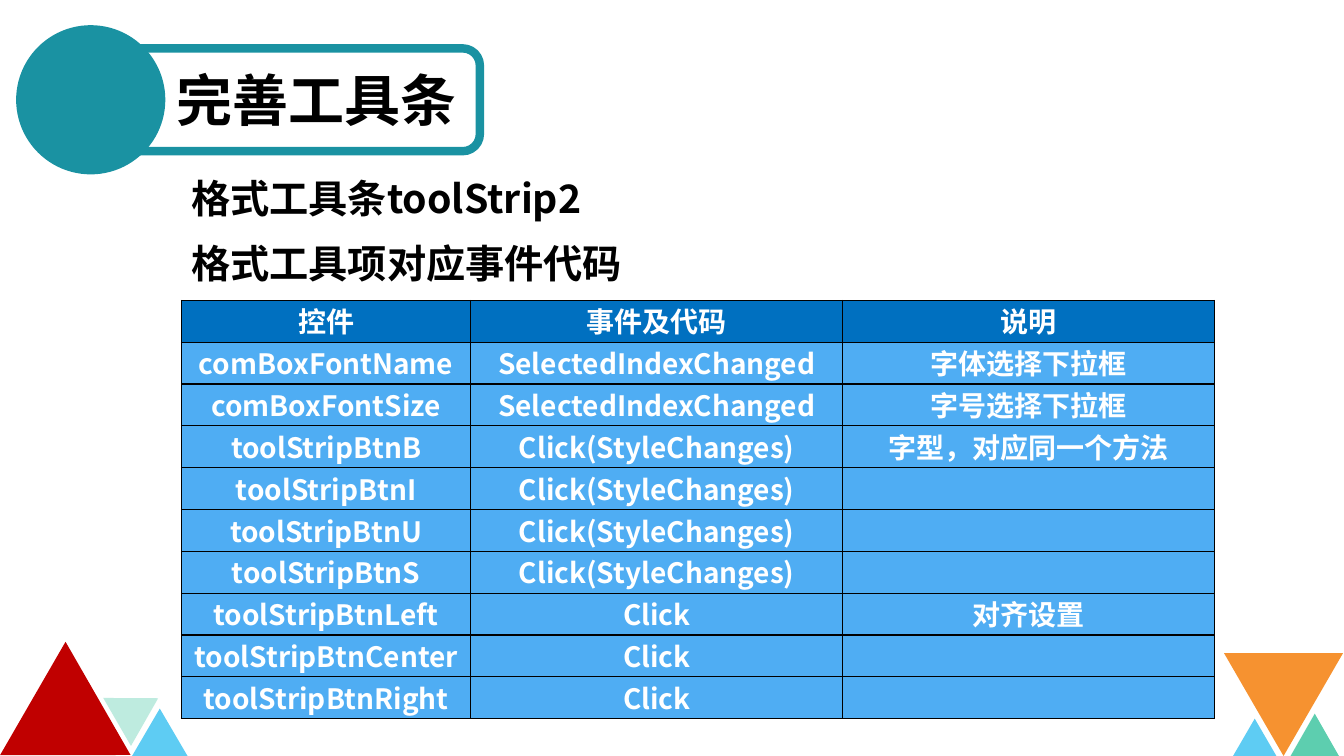
from dataclasses import dataclass

from lxml import etree
from pptx import Presentation
from pptx import util as u
from pptx.dml.color import RGBColor
from pptx.enum import shapes, text
from pptx.oxml import ns

FONT = "Noto Sans CJK SC"
BLACK = RGBColor(0x00, 0x00, 0x00)
WHITE = RGBColor(0xFF, 0xFF, 0xFF)
TEAL = RGBColor(0x1A, 0x92, 0xA2)
ICON_GRAY = RGBColor(0xF2, 0xF2, 0xF2)
HEADER_BLUE = RGBColor(0x00, 0x70, 0xC0)
ROW_BLUE = RGBColor(0x4F, 0xAD, 0xF3)
SKY = RGBColor(0x5E, 0xCC, 0xF3)
MINT = RGBColor(0xBE, 0xEB, 0xDF)
RED = RGBColor(0xC0, 0x00, 0x00)
GREEN = RGBColor(0x5D, 0xCE, 0xAF)
ORANGE = RGBColor(0xF6, 0x92, 0x30)


@dataclass(frozen=True)
class Triangle:
    left: float
    top: float
    width: float
    height: float
    color: RGBColor
    rotation: float = 0


LEFT_TRIANGLES = [
    Triangle(1.31, 7.03, 0.55, 0.47, SKY),
    Triangle(1.09, 6.81, 0.55, 0.47, MINT, 60),
    Triangle(0.16, 6.65, 1.3, 1.12, RED, 120),
]
RIGHT_TRIANGLES = [
    Triangle(12.8, 7.08, 0.48, 0.42, GREEN),
    Triangle(12.14, 6.48, 1.18, 1.02, ORANGE, 180),
    Triangle(12.23, 7.13, 0.43, 0.37, SKY),
]
COLUMN_WIDTHS = [2.87, 3.69, 3.69]
ROW_HEIGHT = 0.415
ROWS = [
    ("控件", "事件及代码", "说明"),
    ("comBoxFontName", "SelectedIndexChanged", "字体选择下拉框"),
    ("comBoxFontSize", "SelectedIndexChanged", "字号选择下拉框"),
    ("toolStripBtnB", "Click(StyleChanges)", "字型，对应同一个方法"),
    ("toolStripBtnI", "Click(StyleChanges)", ""),
    ("toolStripBtnU", "Click(StyleChanges)", ""),
    ("toolStripBtnS", "Click(StyleChanges)", ""),
    ("toolStripBtnLeft", "Click", "对齐设置"),
    ("toolStripBtnCenter", "Click", ""),
    ("toolStripBtnRight", "Click", ""),
]
Points = list[tuple[float, float]]


def write_text(frame, content: str, *, size: float, color: RGBColor = BLACK,
               align=None, line_spacing=None, space_before: float = 0) -> None:
    for index, line in enumerate(content.split("\n")):
        paragraph = frame.add_paragraph() if index else frame.paragraphs[0]
        paragraph.alignment = align
        paragraph.line_spacing = line_spacing
        if index:
            paragraph.space_before = u.Pt(space_before)
        run = paragraph.add_run()
        run.text = line
        font = run.font
        font.name, font.size, font.bold = FONT, u.Pt(size), True
        font.color.rgb = color
        east_asian = etree.SubElement(run._r.get_or_add_rPr(), ns.qn("a:ea"))
        east_asian.set("typeface", FONT)


def add_preset(container, kind, left: float, top: float, width: float, height: float,
               fill: RGBColor | None = None):
    shape = container.add_shape(kind, u.Inches(left), u.Inches(top),
                                u.Inches(width), u.Inches(height))
    shape.shadow.inherit = False
    shape.line.fill.background()
    if fill is None:
        shape.fill.background()
    else:
        shape.fill.solid()
        shape.fill.fore_color.rgb = fill
    return shape


def add_triangles(slide, triangles: list[Triangle]) -> None:
    group = slide.shapes.add_group_shape()
    for item in triangles:
        shape = add_preset(group.shapes, shapes.MSO_SHAPE.ISOSCELES_TRIANGLE, item.left,
                           item.top, item.width, item.height, item.color)
        shape.rotation = item.rotation


def rectangle(left: float, top: float, right: float, bottom: float) -> Points:
    return [(left, top), (right, top), (right, bottom), (left, bottom)]


def drive_half(inner: float, outer: float, top: float, bottom: float) -> Points:
    inward = 1 if inner > outer else -1
    corner = [(0.03, 0), (0.01, 0.01), (0, 0.03)]
    upper = [(outer + inward * x, top + y) for x, y in corner]
    lower = [(outer + inward * x, bottom - y) for x, y in reversed(corner)]
    return [(inner, top), *upper, *lower, (inner, bottom)]


def server_contours() -> list[Points]:
    contours = [
        rectangle(0.57, 1.31, 0.81, 1.37),
        rectangle(1.04, 1.31, 1.23, 1.37),
        rectangle(0.81, 1.28, 1, 1.4),
        rectangle(0.88, 1.19, 0.93, 1.28),
    ]
    for top, bottom in [(0.57, 0.74), (0.79, 0.96), (1.01, 1.19)]:
        contours += [
            drive_half(0.96, 0.57, top, bottom),
            drive_half(1, 1.23, top, bottom),
            rectangle(1.05, top + 0.07, 1.13, top + 0.11),
        ]
    return contours


def add_server_badge(slide) -> None:
    group = slide.shapes.add_group_shape()
    add_preset(group.shapes, shapes.MSO_SHAPE.OVAL, 0.16, 0.25, 1.48, 1.48, TEAL)
    contours = server_contours()
    builder = group.shapes.build_freeform(*contours[0][0], scale=u.Inches(1))
    for index, contour in enumerate(contours):
        if index:
            builder.move_to(*contour[0])
        builder.add_line_segments(contour[1:], close=True)
    icon = builder.convert_to_shape()
    icon.shadow.inherit = False
    icon.fill.solid()
    icon.fill.fore_color.rgb = ICON_GRAY
    icon.line.fill.background()


def add_text_box(slide, left: float, top: float, width: float, height: float, wrap: bool):
    box = slide.shapes.add_textbox(u.Inches(left), u.Inches(top),
                                   u.Inches(width), u.Inches(height))
    box.text_frame.word_wrap = wrap
    return box.text_frame


def set_borders(cell) -> None:
    properties = cell._tc.get_or_add_tcPr()
    for index, side in enumerate(("lnL", "lnR", "lnT", "lnB")):
        border = etree.Element(ns.qn(f"a:{side}"), w=str(u.Pt(1)))
        fill = etree.SubElement(border, ns.qn("a:solidFill"))
        etree.SubElement(fill, ns.qn("a:srgbClr"), val=str(BLACK))
        properties.insert(index, border)


def add_event_table(slide) -> None:
    frame = slide.shapes.add_table(len(ROWS), len(COLUMN_WIDTHS), u.Inches(1.8), u.Inches(2.98),
                                   u.Inches(sum(COLUMN_WIDTHS)),
                                   u.Inches(ROW_HEIGHT * len(ROWS)))
    table = frame.table
    for column, width in zip(table.columns, COLUMN_WIDTHS):
        column.width = u.Inches(width)
    for row_index, values in enumerate(ROWS):
        table.rows[row_index].height = u.Inches(ROW_HEIGHT)
        for column_index, value in enumerate(values):
            cell = table.cell(row_index, column_index)
            cell.margin_left = cell.margin_right = u.Inches(0.07)
            cell.margin_top = cell.margin_bottom = 0
            cell.fill.solid()
            cell.fill.fore_color.rgb = ROW_BLUE if row_index else HEADER_BLUE
            set_borders(cell)
            if value:
                write_text(cell.text_frame, value, size=20, color=WHITE,
                           align=text.PP_ALIGN.CENTER)


def main() -> None:
    presentation = Presentation()
    presentation.slide_width = u.Inches(13.33)
    presentation.slide_height = u.Inches(7.5)
    slide = presentation.slides.add_slide(presentation.slide_layouts[6])
    add_triangles(slide, LEFT_TRIANGLES)
    title_frame = add_preset(slide.shapes, shapes.MSO_SHAPE.ROUNDED_RECTANGLE,
                             1.23, 0.48, 3.53, 1.02)
    title_frame.line.color.rgb = TEAL
    title_frame.line.width = u.Pt(6)
    add_server_badge(slide)
    add_triangles(slide, RIGHT_TRIANGLES)
    title = add_text_box(slide, 1.65, 0.6, 2.98, 0.77, wrap=False)
    title.auto_size = text.MSO_AUTO_SIZE.SHAPE_TO_FIT_TEXT
    write_text(title, "完善工具条", size=40)
    body = add_text_box(slide, 1.8, 1.59, 9.37, 5.55, wrap=True)
    write_text(body, "格式工具条toolStrip2\n格式工具项对应事件代码", size=28,
               line_spacing=1.2, space_before=5.6)
    add_event_table(slide)
    presentation.save("out.pptx")


if __name__ == "__main__":
    main()
